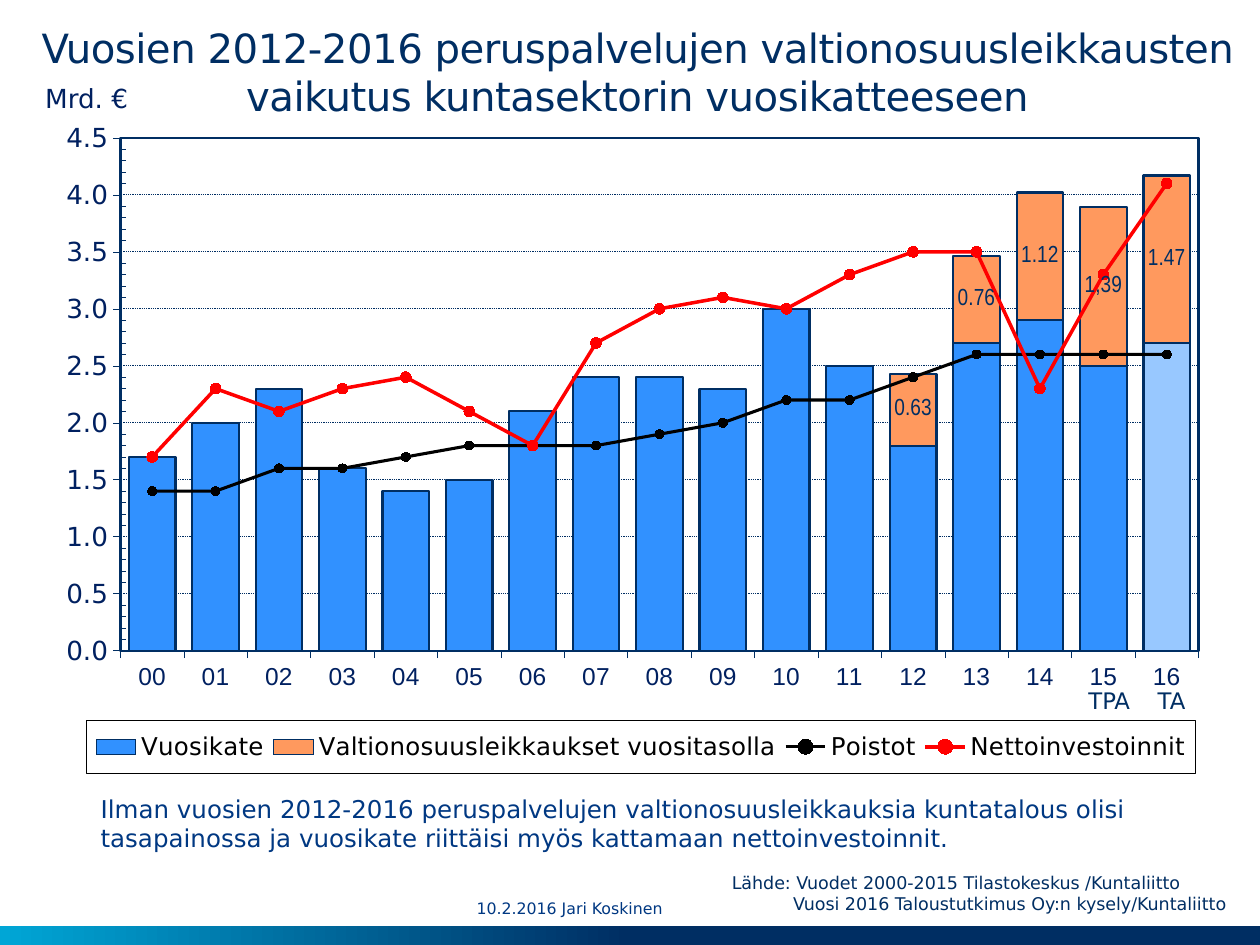
from copy import deepcopy
from lxml.etree import SubElement as Sub
from pptx import Presentation
from pptx.chart.data import CategoryChartData as Data
from pptx.dml.color import RGBColor as RGB
from pptx.enum.chart import XL_CHART_TYPE as Kind, XL_LABEL_POSITION as Spot
from pptx.enum.chart import XL_LEGEND_POSITION as Side, XL_MARKER_STYLE as Mark
from pptx.enum.chart import XL_TICK_MARK as Tick
from pptx.enum.dml import MSO_LINE as Dash
from pptx.enum.shapes import MSO_SHAPE as Shape
from pptx.enum.text import MSO_ANCHOR as Anchor, PP_ALIGN as Align
from pptx.oxml import parse_xml
from pptx.oxml.ns import nsdecls, qn
from pptx.util import Pt

NAVY, INK, BLUE = "002E63", "002060", "003882"
SANS = "DejaVu Sans"
YEARS = [f"{n:02d}" for n in range(17)]
MARGIN = [1.7, 2, 2.3, 1.6, 1.4, 1.5, 2.1, 2.4, 2.4, 2.3, 3, 2.5, 1.8, 2.7, 2.9, 2.5, 2.7]
CUTS = [None] * 12 + [0.63, 0.76, 1.12, 1.39, 1.47]
WEAR = [1.4, 1.4, 1.6, 1.6, 1.7, 1.8, 1.8, 1.8, 1.9, 2, 2.2, 2.2, 2.4, 2.6, 2.6, 2.6, 2.6]
INVEST = [1.7, 2.3, 2.1, 2.3, 2.4, 2.1, 1.8, 2.7, 3, 3.1, 3, 3.3, 3.5, 3.5, 2.3, 3.3, 4.1]


def put(obj, vals):
    for key, val in vals.items():
        setattr(obj, key, val)


def tint(code):
    return RGB.from_string(code)


def style(font, size, code, name=SANS):
    put(font, {"size": Pt(size), "name": name, "bold": False})
    font.color.rgb = tint(code)


def paint(fill, code):
    fill.solid()
    fill.fore_color.rgb = tint(code)


def edge(line, code, width):
    paint(line.fill, code)
    line.width = Pt(width)


def text(slide, box, lines, size, code, align=Align.LEFT, wrap=True):
    frame = slide.shapes.add_textbox(*map(Pt, box)).text_frame
    frame.word_wrap = wrap
    for num, words in enumerate(lines):
        para = frame.paragraphs[0] if num == 0 else frame.add_paragraph()
        para.alignment = align
        run = para.add_run()
        run.text = words
        style(run.font, size, code)
    return frame


def band(slide):
    bar = slide.shapes.add_shape(Shape.RECTANGLE, *map(Pt, (0, 529.2, 720, 10.8)))
    bar.shadow.inherit = False
    bar.line.fill.background()
    bar.fill.gradient()
    bar.fill.gradient_angle = 180
    for stop, place, code in zip(bar.fill.gradient_stops, (0.5, 1), (NAVY, "00A6D6")):
        stop.position = place
        stop.color.rgb = tint(code)


def layout(node, frame, inner=False):
    for old in node.findall(qn("c:layout")):
        node.remove(old)
    root = parse_xml(f"<c:layout {nsdecls('c')}/>")
    man = Sub(root, qn("c:manualLayout"))
    parts = [("layoutTarget", "inner")] if inner else []
    parts += [("xMode", "edge"), ("yMode", "edge"), *zip("xywh", frame)]
    for tag, val in parts:
        Sub(man, qn("c:" + tag)).set("val", str(val))
    return root


def border(code, width):
    return parse_xml(
        f'<c:spPr {nsdecls("c", "a")}><a:noFill/><a:ln w="{Pt(width)}"><a:solidFill>'
        f'<a:srgbClr val="{code}"/></a:solidFill></a:ln></c:spPr>')


def split(chart):
    bars = chart.plots[0]._element
    lines = parse_xml(
        f'<c:lineChart {nsdecls("c")}><c:grouping val="standard"/>'
        '<c:varyColors val="0"/></c:lineChart>')
    for ser in bars.findall(qn("c:ser"))[2:]:
        for flag in ser.findall(qn("c:invertIfNegative")):
            ser.remove(flag)
        lines.append(ser)
    Sub(lines, qn("c:marker")).set("val", "1")
    for axis in bars.findall(qn("c:axId")):
        lines.append(deepcopy(axis))
    bars.addnext(lines)


def axes(chart):
    cat, val = chart.category_axis, chart.value_axis
    put(cat, {"major_tick_mark": Tick.OUTSIDE, "minor_tick_mark": Tick.NONE})
    put(val, {"minimum_scale": 0, "maximum_scale": 4.5, "major_unit": 0.5,
              "minor_unit": 0.1, "major_tick_mark": Tick.OUTSIDE,
              "minor_tick_mark": Tick.INSIDE, "has_major_gridlines": True})
    put(val.tick_labels, {"number_format": "0.0", "number_format_is_linked": False})
    style(cat.tick_labels.font, 14, INK, "Arial")
    style(val.tick_labels.font, 15, INK)
    for axis in (cat, val):
        edge(axis.format.line, NAVY, 0.31)
    grid = val.major_gridlines.format.line
    edge(grid, NAVY, 0.5)
    grid.dash_style = Dash.ROUND_DOT


def bars(plot):
    put(plot, {"gap_width": 36, "overlap": 100, "vary_by_categories": False})
    for ser, code in zip(plot.series, ("3191FF", "FF995E")):
        paint(ser.format.fill, code)
        edge(ser.format.line, NAVY, 1.25)
    last = plot.series[0].points[16].format
    paint(last.fill, "98C8FF")
    edge(last.line, NAVY, 1.25)
    cuts = plot.series[1]
    tags = cuts.data_labels
    put(tags, {"show_value": True, "number_format": "#,##0.00",
               "number_format_is_linked": False, "position": Spot.CENTER})
    style(tags.font, 13.3, NAVY, "Arial Narrow")
    tag = cuts.points[15].data_label
    run = tag.text_frame.paragraphs[0].add_run()
    run.text = "1,39"
    style(run.font, 13.3, NAVY, "Arial Narrow")
    tag.position = Spot.CENTER


def lines(plot):
    looks = (("000000", 1.75, 5), ("FF0000", 2, 6))
    for ser, (code, width, size) in zip(plot.series, looks):
        ser.smooth = False
        edge(ser.format.line, code, width)
        put(ser.marker, {"style": Mark.CIRCLE, "size": size})
        paint(ser.marker.format.fill, code)
        edge(ser.marker.format.line, code, 0.75)


def graph(slide):
    data = Data()
    data.categories = YEARS
    for name, vals in (("Vuosikate", MARGIN),
                       ("Valtionosuusleikkaukset vuositasolla", CUTS),
                       ("Poistot", WEAR), ("Nettoinvestoinnit", INVEST)):
        data.add_series(name, vals)
    box = map(Pt, (29.5, 69.8, 666.7, 375.8))
    chart = slide.shapes.add_chart(Kind.COLUMN_STACKED, *box, data).chart
    put(chart, {"has_title": False, "has_legend": True})
    style(chart.font, 14, NAVY, "Arial")
    split(chart)
    axes(chart)
    bars(chart.plots[0])
    lines(chart.plots[1])
    area = chart.plots[0]._element.getparent()
    area.insert(0, layout(area, (0.059, 0.024, 0.924, 0.78), True))
    area.append(border(NAVY, 1.25))
    key = chart.legend
    put(key, {"position": Side.BOTTOM, "include_in_layout": False})
    style(key.font, 14, "000000")
    node = key._element
    node.find(qn("c:legendPos")).addnext(layout(node, (0.03, 0.91, 0.95, 0.08)))
    node.find(qn("c:txPr")).addprevious(border("000000", 0.5))


def main():
    deck = Presentation()
    put(deck, {"slide_width": Pt(720), "slide_height": Pt(540)})
    slide = deck.slides.add_slide(deck.slide_layouts[6])
    band(slide)
    title = text(slide, (20.2, 9.4, 688.3, 62.6),
                 ["Vuosien 2012-2016 peruspalvelujen valtionosuusleikkausten "
                  "vaikutus kuntasektorin vuosikatteeseen"], 23, NAVY, Align.CENTER)
    put(title, {"margin_left": 0, "margin_right": 0, "vertical_anchor": Anchor.BOTTOM})
    title.paragraphs[0].runs[0].font._element.set("spc", "-30")
    graph(slide)
    text(slide, (223.9, 509.8, 203, 20.9), ["10.2.2016 Jari Koskinen"], 9, BLUE, Align.CENTER)
    text(slide, (50.4, 450, 627.1, 41),
         ["Ilman vuosien 2012-2016 peruspalvelujen valtionosuusleikkauksia kuntatalous "
          "olisi tasapainossa ja vuosikate riittäisi myös kattamaan nettoinvestoinnit."],
         14, BLUE)
    text(slide, (18.7, 43.2, 63.4, 25.2), ["Mrd. €"], 15, INK, wrap=False)
    source = text(slide, (411.1, 494.6, 311.8, 31.7),
                  ["Lähde: Vuodet 2000-2015 Tilastokeskus /Kuntaliitto",
                   "Vuosi 2016 Taloustutkimus Oy:n kysely/Kuntaliitto"], 10, NAVY)
    source.paragraphs[1]._p.get_or_add_pPr().set("marL", str(Pt(35)))
    for left, width, words in ((654.5, 31, "TA"), (614.9, 38.9, "TPA")):
        text(slide, (left, 388.8, width, 23), [words], 13, NAVY, wrap=False)
    deck.save("out.pptx")


if __name__ == "__main__":
    main()
